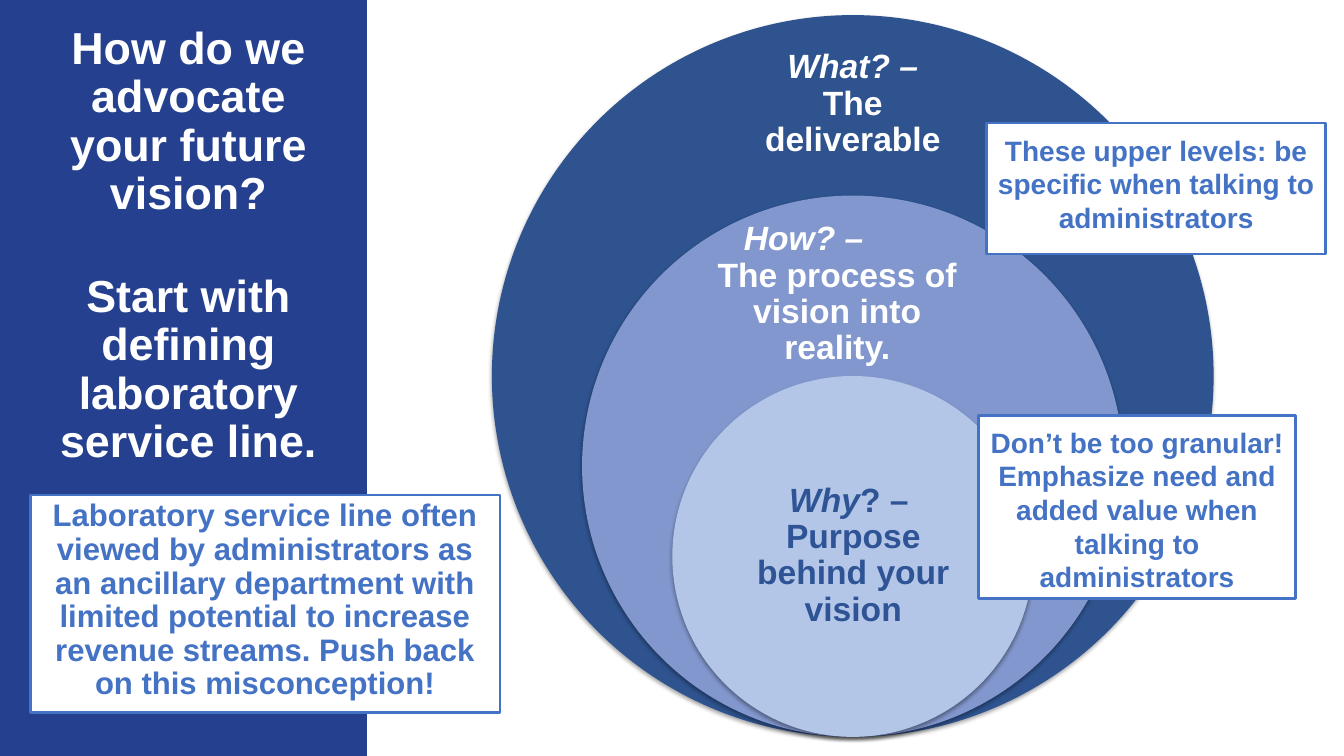
from dataclasses import dataclass

from lxml.etree import SubElement
from pptx import Presentation
from pptx.dml.color import RGBColor as Rgb
from pptx.enum.shapes import MSO_SHAPE as Preset
from pptx.enum.text import MSO_ANCHOR as Anchor, MSO_AUTO_SIZE as AutoSize, PP_ALIGN as Align
from pptx.oxml.ns import qn
from pptx.util import Emu, Inches, Pt

WIDTH, HEIGHT = Inches(13.333), Inches(7.5)
COLUMN, ROW = WIDTH / 100, HEIGHT / 100


@dataclass(frozen=True)
class Theme:
    """Colours, font and type sizes of the slide."""
    panel: str = "25408F"
    accent: str = "4472C4"
    white: str = "FFFFFF"
    purpose: str = "2F5496"
    rings: tuple = ("2E538F", "8297CD", "B3C6E7")
    font: str = "Arial"
    title: float = 32
    body: float = 22.2
    label: float = 24
    callout: float = 20


THEME = Theme()


def area(column, row, columns, rows):
    """Turn a place on the 100 by 100 grid into slide lengths."""
    return [Emu(round(n)) for n in (column * COLUMN, row * ROW, columns * COLUMN, rows * ROW)]


def place(box, column, row, columns, rows):
    """Move a placeholder to a place on the grid."""
    box.left, box.top, box.width, box.height = area(column, row, columns, rows)


def paint(shape, fill, outline=None):
    """Give a shape a plain fill and an optional outline."""
    shape.fill.solid()
    shape.fill.fore_color.rgb = Rgb.from_string(fill)
    if outline:
        shape.line.color.rgb = Rgb.from_string(outline)
        shape.line.width = Pt(2)
    else:
        shape.line.fill.background()


def indent(paragraph, margin):
    """Set a paragraph's left margin in inches, with no hanging first line."""
    properties = paragraph._p.get_or_add_pPr()
    properties.set("marL", str(Inches(margin)))
    properties.set("indent", "0")
    return properties


def write(box, paragraphs, size, color, anchor=Anchor.TOP, insets=(0.1, 0.1), spacing=0.9, gap=0):
    """Fill a box with centred bold paragraphs, each a list of (words, italic) runs."""
    frame = box.text_frame
    frame.word_wrap = True
    frame.auto_size = AutoSize.NONE
    frame.vertical_anchor = anchor
    frame.margin_left = frame.margin_right = Inches(insets[0])
    frame.margin_top = frame.margin_bottom = Inches(insets[1])
    for index, runs in enumerate(paragraphs):
        paragraph = frame.add_paragraph() if index else frame.paragraphs[0]
        paragraph.alignment = Align.CENTER
        paragraph.line_spacing = spacing
        paragraph.space_before = Pt(gap if index else 0)
        paragraph.space_after = Pt(0)
        for words, italic in runs:
            run = paragraph.add_run()
            run.text = words
            run.font.name, run.font.size = THEME.font, Pt(size)
            run.font.bold, run.font.italic = True, italic
            run.font.color.rgb = Rgb.from_string(color)


def add_panel(slide):
    """Put the coloured side panel behind everything else."""
    panel = slide.shapes.add_shape(Preset.RECTANGLE, *area(0, 0, 27.3, 100))
    panel.shadow.inherit = False
    paint(panel, THEME.panel)
    slide.shapes._spTree.insert(2, panel._element)


def add_ring(rings, share, color):
    """Draw a circle, sized by its share of the largest, standing on the common base."""
    diameter = round(95.47 * ROW * share)
    left, top = round(63.45 * COLUMN - diameter / 2), round(97.47 * ROW - diameter)
    ring = rings.shapes.add_shape(Preset.OVAL, left, top, diameter, diameter)
    paint(ring, color)
    ring.shadow.inherit = False
    effects = ring._element.spPr.find(qn("a:effectLst"))
    shadow = SubElement(effects, qn("a:outerShdw"), blurRad=str(Pt(3.1)), dist=str(Pt(1.8)),
                        dir="5400000", rotWithShape="0")
    black = SubElement(shadow, qn("a:srgbClr"), val="000000")
    SubElement(black, qn("a:alpha"), val="35000")


def add_label(rings, place_on_grid, heading, explanation, color, inset, heading_margin=0):
    """Write a ring's heading, centred or set at a left margin, and its explanation."""
    label = rings.shapes.add_textbox(*area(*place_on_grid))
    write(label, [heading, [(explanation, False)]], THEME.label, color,
          Anchor.MIDDLE, (inset, inset))
    if heading_margin:
        first, second = label.text_frame.paragraphs
        first.alignment = Align.LEFT
        indent(first, heading_margin)
        indent(second, 0)


def add_callout(slide, place_on_grid, advice):
    """Add an outlined box with advice."""
    callout = slide.shapes.add_shape(Preset.RECTANGLE, *area(*place_on_grid))
    callout.shadow.inherit = False
    paint(callout, THEME.white, THEME.accent)
    write(callout, [[(advice, False)]], THEME.callout, THEME.accent, spacing=1)


def fill_placeholders(slide):
    """Place and write the title and the boxed body text."""
    title, body = slide.shapes.title, slide.placeholders[1]
    place(title, 2.25, 3.87, 23.55, 57.47)
    write(title, [[("How do we advocate your future vision?", False)],
                  [("Start with defining laboratory service line.", False)]],
          THEME.title, THEME.white, Anchor.MIDDLE, (0.1, 0.05), gap=39)
    place(body, 2.25, 65.47, 34.95, 28.8)
    paint(body, THEME.white, THEME.accent)
    SubElement(indent(body.text_frame.paragraphs[0], 0), qn("a:buNone"))
    write(body, [[("Laboratory service line often viewed by administrators as an ancillary "
                   "department with limited potential to increase revenue streams. "
                   "Push back on this misconception!", False)]],
          THEME.body, THEME.accent, insets=(0.1, 0.05))


def main():
    """Build the slide and save it."""
    deck = Presentation()
    deck.slide_width, deck.slide_height = WIDTH, HEIGHT
    slide = deck.slides.add_slide(deck.slide_layouts[1])
    add_panel(slide)
    fill_placeholders(slide)
    rings = slide.shapes.add_group_shape()
    labels = (
        ((54.08, 6.67, 18.75, 14.27), [("What? –", True)],
         "The deliverable", THEME.white, 0.22),
        ((51.68, 30.27, 21.23, 17.33), [("How? –", True)],
         "The process of vision into reality.", THEME.white, 0.19, 0.3),
        ((54, 61.6, 18.98, 23.87), [("Why", True), ("? –", False)],
         "Purpose behind your vision", THEME.purpose, 0.16, 0.47),
    )
    for level, (color, label) in enumerate(zip(THEME.rings, labels)):
        add_ring(rings, 1 - level / 4, color)
        add_label(rings, *label)
    add_callout(slide, (73.43, 16.27, 25.2, 17.33),
                "These upper levels: be specific when talking to administrators")
    add_callout(slide, (72.83, 54.93, 23.55, 24.27),
                "Don’t be too granular! Emphasize need and added value when talking to administrators")
    deck.save("out.pptx")


if __name__ == "__main__":
    main()
